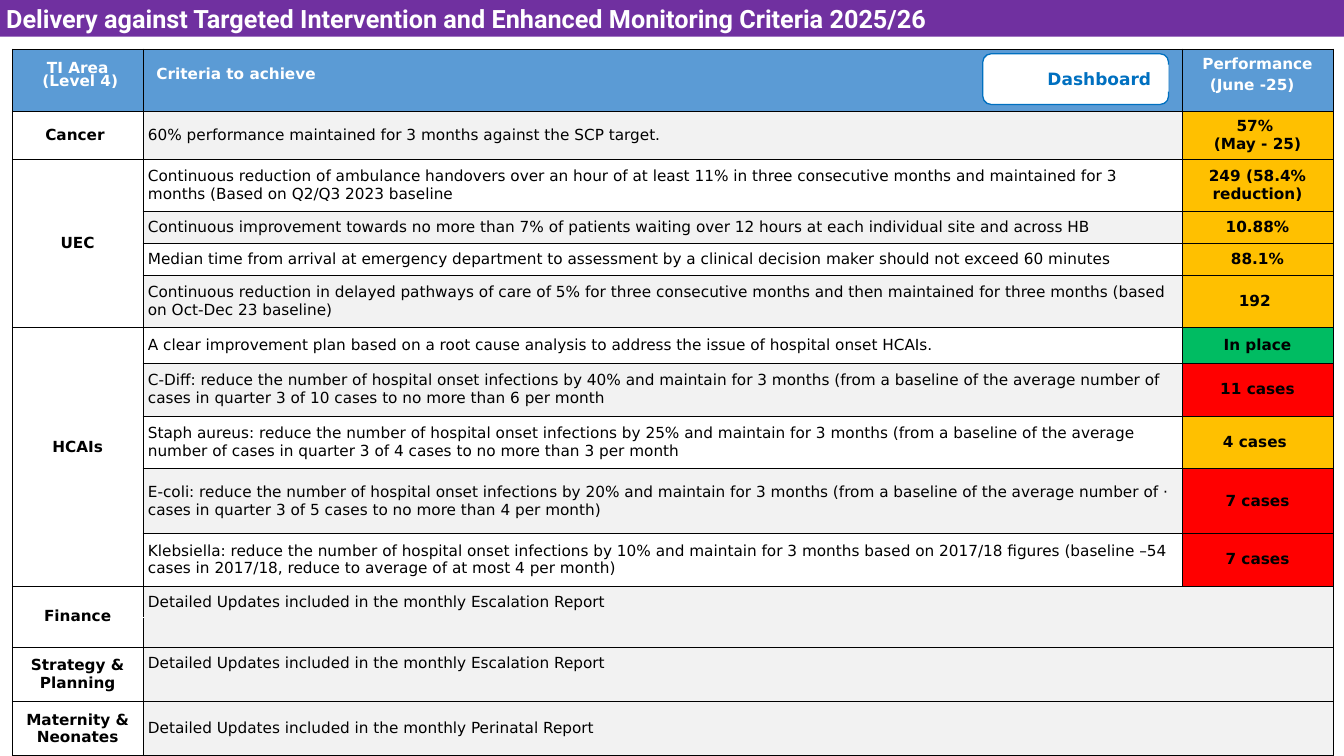
"""Build the slide on delivery against the intervention and monitoring criteria."""
import lxml.etree
import pptx
import pptx.dml.color
import pptx.enum.shapes
import pptx.enum.text
import pptx.oxml.ns
import pptx.util

Inches = pptx.util.Inches
Pt = pptx.util.Pt
ALIGN = pptx.enum.text.PP_ALIGN
ANCHOR = pptx.enum.text.MSO_ANCHOR
SHAPE = pptx.enum.shapes.MSO_SHAPE

COLOURS = {
    "purple": "7030A0", "header": "5B9BD5", "blue": "0070C0", "band": "F2F2F2",
    "white": "FFFFFF", "black": "000000",
    "amber": "FFC000", "green": "00BC62", "red": "FF0000",
}


def colour(name):
    return pptx.dml.color.RGBColor.from_string(COLOURS[name])


def write_text(frame, text, font_colour, paragraph_format, **font_format):
    frame.text = text
    font_values = {"name": "DejaVu Sans", "size": Pt(18), "bold": True, **font_format}
    for paragraph in frame.paragraphs:
        for name, value in paragraph_format.items():
            setattr(paragraph, name, value)
        for run in paragraph.runs:
            for name, value in font_values.items():
                setattr(run.font, name, value)
            run.font.color.rgb = colour(font_colour)


column_widths = [2.14, 17, 2.47]
row_heights = [1.02, 0.79, 0.85, 0.52, 0.52, 0.85, 0.59, 0.87,
               0.86, 1.06, 0.86, 0.52, 0.48, 0.89, 0.89]
headings = ["TI Area\n (Level 4)", "Criteria to achieve", "Performance\n(June -25)  "]
areas = {1: "Cancer ", 2: "UEC", 6: "HCAIs", 11: "Finance",
         13: "Strategy & Planning", 14: "Maternity & Neonates"}
criteria = [
    ("60% performance maintained for 3 months against the SCP target.",
     "57% \n(May - 25)", "amber"),
    ("Continuous reduction of ambulance handovers over an hour of at least 11% in three "
     "consecutive months and maintained for 3 months (Based on Q2/Q3 2023 baseline",
     "249 (58.4% reduction)", "amber"),
    ("Continuous improvement towards no more than 7% of patients waiting over 12 hours "
     "at each individual site and across HB", "10.88%", "amber"),
    ("Median time from arrival at emergency department to assessment by a clinical "
     "decision maker should not exceed 60 minutes", "88.1%", "amber"),
    ("Continuous reduction in delayed pathways of care of 5% for three consecutive months "
     "and then maintained for three months (based on Oct-Dec 23 baseline)", "192 ", "amber"),
    ("A clear improvement plan based on a root cause analysis to address the issue of "
     "hospital onset HCAIs.", "In place", "green"),
    ("C-Diff: reduce the number of hospital onset infections by 40% and maintain for "
     "3 months (from a baseline of the average number of cases in quarter 3 of 10 cases "
     "to no more than 6 per month", "11 cases", "red"),
    ("Staph aureus: reduce the number of hospital onset infections by 25% and maintain for "
     "3 months (from a baseline of the average number of cases in quarter 3 of 4 cases "
     "to no more than 3 per month", "4 cases ", "amber"),
    ("E-coli: reduce the number of hospital onset infections by 20% and maintain for "
     "3 months (from a baseline of the average number of · cases in quarter 3 of 5 cases "
     "to no more than 4 per month)", "7 cases", "red"),
    ("Klebsiella: reduce the number of hospital onset infections by 10% and maintain for "
     "3 months based on 2017/18 figures (baseline –54 cases in 2017/18, reduce to average "
     "of at most 4 per month)", "7 cases", "red"),
]
updates = {11: "Escalation", 13: "Escalation", 14: "Perinatal"}
merges = [(2, 0, 5, 0), (6, 0, 10, 0), (11, 0, 12, 0)]
merges += [(row_index, 1, row_index, 2) for row_index in range(11, 15)]
open_edges = {(11, "lnB"), (12, "lnT")}

presentation = pptx.Presentation()
presentation.slide_width = Inches(21.99)
presentation.slide_height = Inches(12.37)
slide = presentation.slides.add_slide(presentation.slide_layouts[5])

title = slide.shapes.title
title_place = {"left": Inches(0), "top": Inches(0),
               "width": Inches(21.99), "height": Inches(0.6)}
for name, value in title_place.items():
    setattr(title, name, value)
title.fill.solid()
title.fill.fore_color.rgb = colour("purple")
title_frame = {"auto_size": pptx.enum.text.MSO_AUTO_SIZE.NONE,
               "vertical_anchor": ANCHOR.MIDDLE, "word_wrap": True}
for name, value in title_frame.items():
    setattr(title.text_frame, name, value)
write_text(title.text_frame,
           "Delivery against Targeted Intervention and Enhanced Monitoring Criteria 2025/26",
           "white", {"alignment": ALIGN.JUSTIFY}, name="Roboto", size=Pt(29.7))

table = slide.shapes.add_table(
    len(row_heights), len(column_widths), Inches(0.2), Inches(0.8),
    Inches(sum(column_widths)), Inches(sum(row_heights))).table
table.first_row = False
table.horz_banding = False
for column, width in zip(table.columns, column_widths):
    column.width = Inches(width)
for row, height in zip(table.rows, row_heights):
    row.height = Inches(height)

for row_index in range(len(row_heights)):
    for column_index in range(len(column_widths)):
        cell = table.cell(row_index, column_index)
        banded = column_index > 0 and (row_index % 2 == 1 or row_index > 10)
        cell.fill.solid()
        cell.fill.fore_color.rgb = colour(
            "header" if row_index == 0 else "band" if banded else "white")
        cell.vertical_anchor = ANCHOR.MIDDLE
        side, end = (0.22, 0.11) if row_index == 0 else (0.08, 0.08)
        cell.margin_left = cell.margin_right = Inches(side)
        cell.margin_top = cell.margin_bottom = Inches(end)
        properties = cell._tc.get_or_add_tcPr()
        for position, edge in enumerate(("lnL", "lnR", "lnT", "lnB")):
            is_open = column_index > 0 and (row_index, edge) in open_edges
            border = lxml.etree.Element(pptx.oxml.ns.qn(f"a:{edge}"), w=str(Pt(1)))
            fill = lxml.etree.SubElement(border, pptx.oxml.ns.qn("a:solidFill"))
            lxml.etree.SubElement(fill, pptx.oxml.ns.qn("a:srgbClr"),
                                  val=COLOURS["band" if is_open else "black"])
            properties.insert(position, border)

for top, left, bottom, right in merges:
    table.cell(top, left).merge(table.cell(bottom, right))

centred = {"alignment": ALIGN.CENTER}
left_aligned = {"alignment": ALIGN.LEFT}
heading_formats = [centred, left_aligned, centred]
for column_index, (heading, heading_format) in enumerate(zip(headings, heading_formats)):
    frame = table.cell(0, column_index).text_frame
    write_text(frame, heading, "white", {**heading_format, "line_spacing": Pt(8)})
    for paragraph in frame.paragraphs[1:]:
        paragraph.space_before = Pt(8 * (column_index // 2 + 1))

for row_index, area in areas.items():
    write_text(table.cell(row_index, 0).text_frame, area, "black", centred)
table.cell(6, 0).margin_bottom = Inches(0.38)

for row_index, (criterion, performance, status) in enumerate(criteria, start=1):
    write_text(table.cell(row_index, 1).text_frame, criterion, "black", left_aligned, bold=False)
    result = table.cell(row_index, 2)
    result.fill.fore_color.rgb = colour(status)
    write_text(result.text_frame, performance, "black", centred)

for row_index, report in updates.items():
    write_text(table.cell(row_index, 1).text_frame,
               f"Detailed Updates included in the monthly {report} Report",
               "black", left_aligned, bold=False)
strategy_update = table.cell(13, 1)
strategy_update.vertical_anchor = ANCHOR.TOP
strategy_update.margin_top = Inches(0.12)

button = slide.shapes.add_shape(
    SHAPE.ROUNDED_RECTANGLE, Inches(16.08), Inches(0.88), Inches(3.04), Inches(0.83))
button.line.color.rgb = colour("blue")
button.line.width = Pt(1.5)
label = slide.shapes.add_shape(
    SHAPE.RECTANGLE, Inches(17.04), Inches(1.06), Inches(2.08), Inches(0.44))
label.line.fill.background()
for shape in (button, label):
    shape.shadow.inherit = False
    shape.fill.solid()
    shape.fill.fore_color.rgb = colour("white")
write_text(label.text_frame, "Dashboard", "blue", left_aligned, size=Pt(20))

presentation.save("out.pptx")
